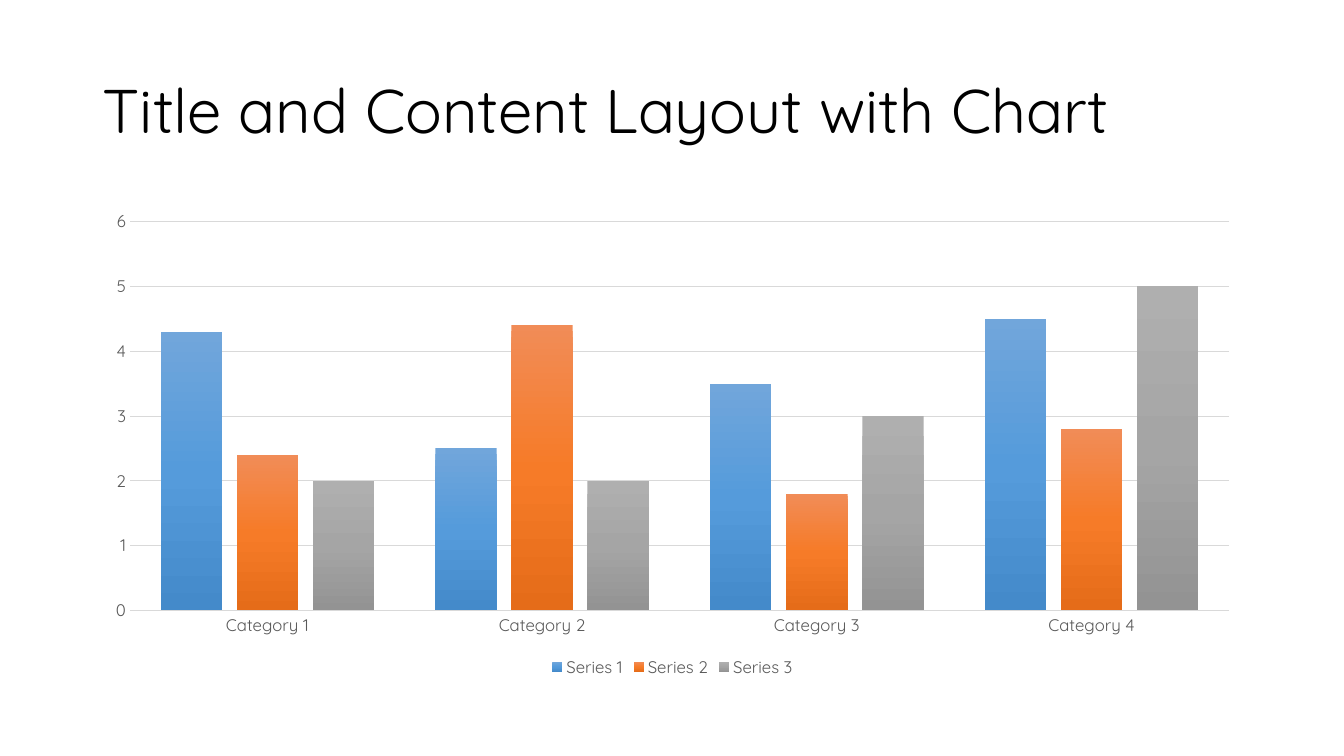
import pptx
import pptx.util
import pptx.chart.data
import pptx.dml.color
import pptx.enum.chart
import pptx.enum.text
import pptx.oxml

FONT = "Quicksand"
GREY_TEXT = "595959"
GREY_LINE = "D9D9D9"
CATEGORIES = ["Category 1", "Category 2", "Category 3", "Category 4"]
SERIES = [
    ("Series 1", (4.3, 2.5, 3.5, 4.5), ("71A6DB", "559BDB", "448ACA")),
    ("Series 2", (2.4, 4.4, 1.8, 2.8), ("F18C57", "F67B28", "E56C19")),
    ("Series 3", (2, 2, 3, 5), ("AFAFAF", "A5A5A5", "939393")),
]


def color(hex_code):
    return pptx.dml.color.RGBColor.from_string(hex_code)


def style_font(font, size, hex_code):
    font.name = FONT
    font.size = pptx.util.Pt(size)
    font.bold = False
    font.color.rgb = color(hex_code)


def style_line(line, width):
    line.color.rgb = color(GREY_LINE)
    line.width = pptx.util.Pt(width)


def fill_gradient(series, hex_codes):
    step = 100000 // (len(hex_codes) - 1)
    stops = "".join(
        f'<a:gs pos="{index * step}"><a:srgbClr val="{hex_code}"/></a:gs>'
        for index, hex_code in enumerate(hex_codes)
    )
    gradient = pptx.oxml.parse_xml(
        '<a:gradFill xmlns:a="http://schemas.openxmlformats.org/drawingml/2006/main"'
        f' rotWithShape="1"><a:gsLst>{stops}</a:gsLst>'
        '<a:lin ang="5400000" scaled="0"/></a:gradFill>'
    )
    series._element.get_or_add_spPr().insert(0, gradient)


def add_title(slide, box, text):
    frame = slide.shapes.add_textbox(*box).text_frame
    frame.word_wrap = True
    frame.vertical_anchor = pptx.enum.text.MSO_ANCHOR.MIDDLE
    paragraph = frame.paragraphs[0]
    paragraph.text = text
    paragraph.line_spacing = 0.9
    style_font(paragraph.font, 44, "000000")


def style_axis(axis):
    axis.major_tick_mark = pptx.enum.chart.XL_TICK_MARK.NONE
    axis.minor_tick_mark = pptx.enum.chart.XL_TICK_MARK.NONE
    style_font(axis.tick_labels.font, 12, GREY_TEXT)


def add_column_chart(slide, box):
    data = pptx.chart.data.CategoryChartData()
    data.categories = CATEGORIES
    for name, values, _ in SERIES:
        data.add_series(name, values)
    chart = slide.shapes.add_chart(
        pptx.enum.chart.XL_CHART_TYPE.COLUMN_CLUSTERED, *box, data
    ).chart
    chart.has_title = False
    style_font(chart.font, 10, "000000")

    plot = chart.plots[0]
    plot.gap_width = 100
    plot.overlap = -24
    plot.vary_by_categories = False
    for series, (_, _, hex_codes) in zip(plot.series, SERIES):
        series.invert_if_negative = False
        fill_gradient(series, hex_codes)

    style_axis(chart.category_axis)
    style_line(chart.category_axis.format.line, 1)
    style_axis(chart.value_axis)
    chart.value_axis.format.line.fill.background()
    chart.value_axis.has_major_gridlines = True
    style_line(chart.value_axis.major_gridlines.format.line, 0.75)

    chart.has_legend = True
    chart.legend.position = pptx.enum.chart.XL_LEGEND_POSITION.BOTTOM
    chart.legend.include_in_layout = False
    style_font(chart.legend.font, 12, GREY_TEXT)


def main():
    presentation = pptx.Presentation()
    presentation.slide_width = pptx.util.Inches(13.33)
    presentation.slide_height = pptx.util.Inches(7.5)
    slide = presentation.slides.add_slide(presentation.slide_layouts[6])
    left, width = pptx.util.Inches(0.92), pptx.util.Inches(11.5)
    title_box = (left, pptx.util.Inches(0.4), width, pptx.util.Inches(1.45))
    chart_box = (left, pptx.util.Inches(2), width, pptx.util.Inches(4.76))
    add_column_chart(slide, chart_box)
    add_title(slide, title_box, "Title and Content Layout with Chart")
    presentation.save("out.pptx")


if __name__ == "__main__":
    main()
